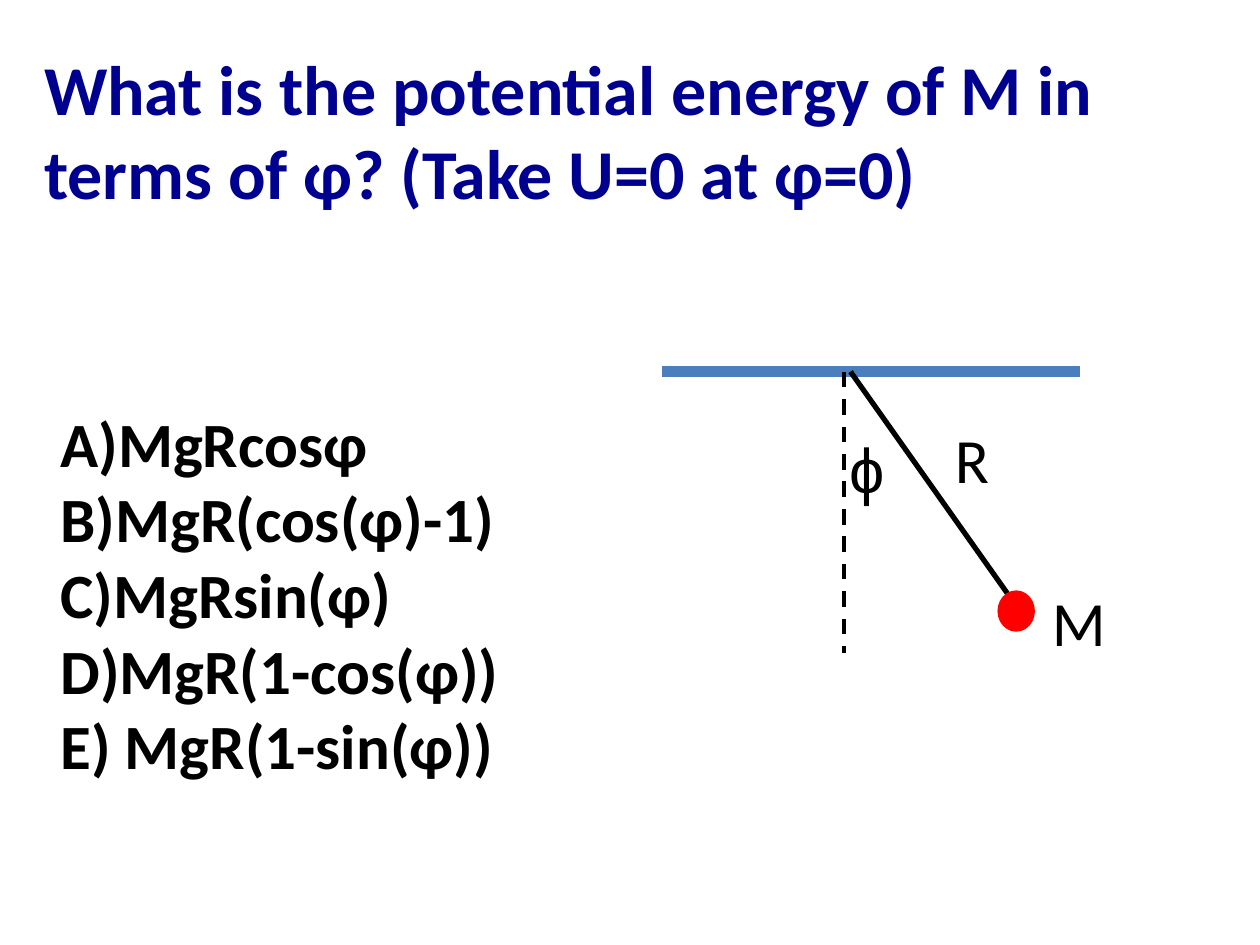
from dataclasses import dataclass

from lxml.etree import SubElement
from pptx import Presentation
from pptx.dml.color import RGBColor
from pptx.enum.dml import MSO_LINE_DASH_STYLE as Dash
from pptx.enum.shapes import MSO_CONNECTOR as Connector, MSO_SHAPE as Shape
from pptx.enum.text import MSO_ANCHOR as Anchor, MSO_AUTO_SIZE as AutoSize, PP_ALIGN as Align
from pptx.oxml.ns import qn
from pptx.util import Pt


@dataclass(frozen=True)
class Theme:
    question: RGBColor = RGBColor(0x00, 0x00, 0x90)
    ink: RGBColor = RGBColor(0x00, 0x00, 0x00)
    ceiling: RGBColor = RGBColor(0x4B, 0x7E, 0xBC)
    bob: RGBColor = RGBColor(0xFF, 0x00, 0x00)
    font: str = "Calibri"
    symbol_font: str = "Arial"
    question_size: int = 40
    body_size: int = 36


THEME = Theme()
QUESTION = ["What is the potential energy of M in", "terms of φ? (Take U=0 at φ=0)"]
ANSWERS = ["A)MgRcosφ", "B)MgR(cos(φ)-1)", "C)MgRsin(φ)", "D)MgR(1-cos(φ))", "E) MgR(1-sin(φ))"]


def write(shape, lines, size, color=THEME.ink, bold=False, font=THEME.font):
    frame = shape.text_frame
    frame.word_wrap = True
    frame.auto_size = AutoSize.NONE
    frame.vertical_anchor = Anchor.TOP
    frame.text = "\n".join(lines)
    for paragraph in frame.paragraphs:
        paragraph.alignment = Align.LEFT
        paragraph.space_before = Pt(0)
        paragraph.font.name = font
        paragraph.font.size = Pt(size)
        paragraph.font.bold = bold
        paragraph.font.color.rgb = color


def add_question(slide, left, top, width, height):
    title = slide.shapes.title
    title.left, title.top, title.width, title.height = map(Pt, (left, top, width, height))
    write(title, QUESTION, THEME.question_size, THEME.question, bold=True)


def add_answers(slide, left, top, width, height):
    answers = slide.shapes.add_textbox(*map(Pt, (left, top, width, height)))
    write(answers, ANSWERS, THEME.body_size, bold=True)


def add_pendulum(slide, left, top, width, height):
    """Hang the pendulum from a ceiling along the top of the box."""
    shapes = slide.shapes.add_group_shape().shapes

    def add_line(x1, y1, x2, y2, color, weight, dash=None):
        line = shapes.add_connector(
            Connector.STRAIGHT, Pt(left + x1), Pt(top + y1), Pt(left + x2), Pt(top + y2))
        line.line.color.rgb = color
        line.line.width = Pt(weight)
        if dash:
            line.line.dash_style = dash
        SubElement(line._element.spPr, qn("a:effectLst"))

    def add_label(text, x, y, label_width, font=THEME.font):
        label = shapes.add_textbox(Pt(left + x), Pt(top + y), Pt(label_width), Pt(51))
        write(label, [text], THEME.body_size, font=font)

    add_line(0, 0, width, 0, THEME.ceiling, 6)
    add_line(104.4, 0, 104.4, height, THEME.ink, 2.25, Dash.DASH)
    add_line(108, 0, 200.2, 130.3, THEME.ink, 3)

    bob = shapes.add_shape(Shape.OVAL, Pt(left + 193), Pt(top + 126), Pt(19.4), Pt(21.6))
    bob.shadow.inherit = False
    bob.fill.solid()
    bob.fill.fore_color.rgb = THEME.bob
    bob.line.color.rgb = THEME.bob
    bob.line.width = Pt(2)

    add_label("M", 216, 117.4, 65.5)
    add_label("R", 160.6, 24.5, 42.5)
    add_label("ϕ", 100.1, 30.2, 46, THEME.symbol_font)


def main():
    deck = Presentation()
    deck.slide_width, deck.slide_height = Pt(720), Pt(540)
    slide = deck.slides.add_slide(deck.slide_layouts.get_by_name("Title Only"))
    add_question(slide, 18, 22.3, 702, 104.4)
    add_answers(slide, 27.4, 227.5, 360, 225.4)
    add_pendulum(slide, 378, 212.4, 239, 160.6)
    deck.save("out.pptx")


if __name__ == "__main__":
    main()
